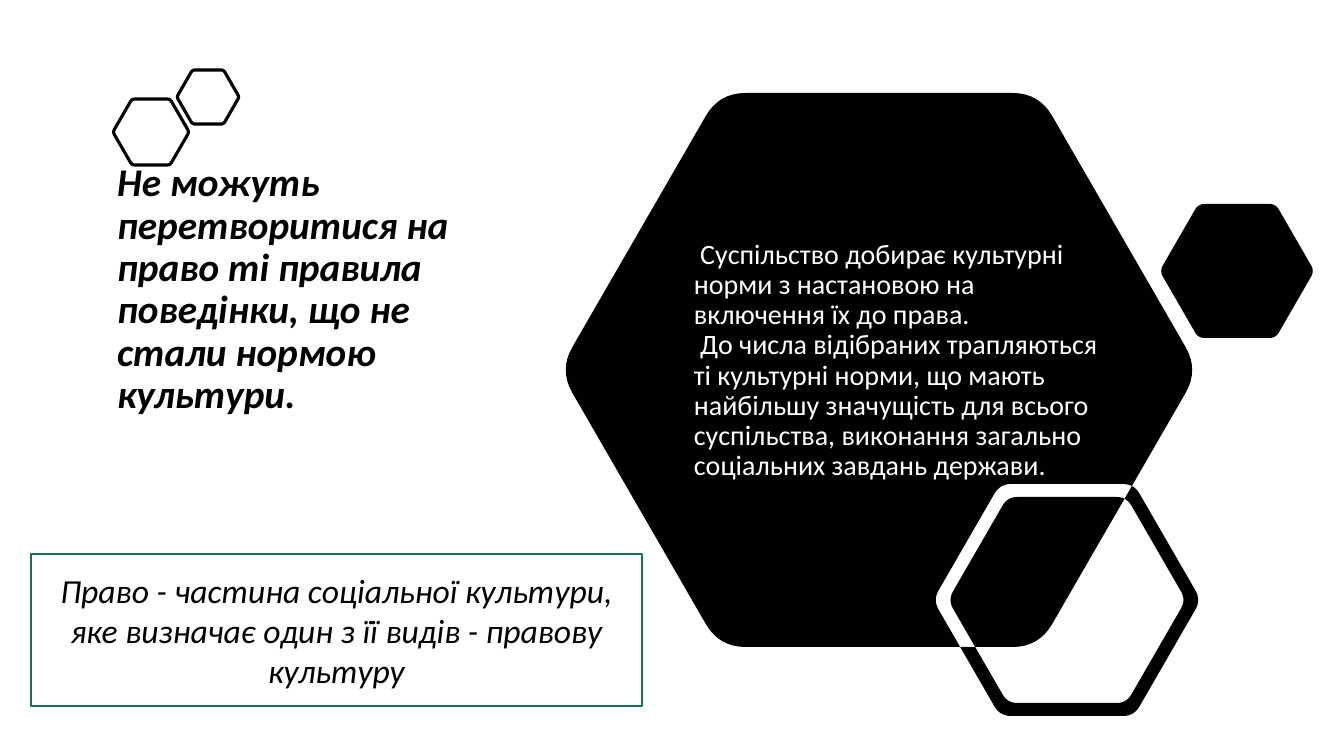
import math

import pptx
import pptx.dml.color
import pptx.enum.shapes
import pptx.enum.text
import pptx.util

BLACK = pptx.dml.color.RGBColor(0x00, 0x00, 0x00)
WHITE = pptx.dml.color.RGBColor(0xFF, 0xFF, 0xFF)
GREEN = pptx.dml.color.RGBColor(0x15, 0x72, 0x59)
ALIGN = pptx.enum.text.PP_ALIGN
MIDDLE = pptx.enum.text.MSO_ANCHOR.MIDDLE
NO_FIT = pptx.enum.text.MSO_AUTO_SIZE.NONE
RECT = pptx.enum.shapes.MSO_SHAPE.RECTANGLE
FONT = "Calibri"
CUT = 0.083
STEPS = 8

CLAIM = "Не можуть перетворитися на право ті правила поведінки, що не стали нормою культури."
NORMS = [
    " Суспільство добирає культурні норми з настановою на включення їх до права.",
    " До числа відібраних трапляються ті культурні норми, що мають найбільшу значущість "
    "для всього суспільства, виконання загально соціальних завдань держави.",
]
THESIS = "Право - частина соціальної культури, яке визначає один з її видів - правову культуру"


def px(count):
    return round(count * 914400 / 100.8)


def put_text(shape, *lines, size, color=BLACK, bold=False, italic=False,
             align=ALIGN.LEFT, spacing=1.0):
    frame = shape.text_frame
    frame.word_wrap = True
    frame.auto_size = NO_FIT
    frame.vertical_anchor = MIDDLE
    frame.text = "\n".join(lines)
    for para in frame.paragraphs:
        para.alignment = align
        para.line_spacing = spacing
        para.space_before = pptx.util.Pt(0)
        font = para.runs[0].font
        font.name = FONT
        font.size = pptx.util.Pt(size)
        font.bold = bold
        font.italic = italic
        font.color.rgb = color


def place(shape, left, top, width, height):
    shape.left, shape.top = px(left), px(top)
    shape.width, shape.height = px(width), px(height)


def hex_points(mid_x, mid_y, height):
    side = height / math.sqrt(3)
    peaks = [(mid_x + side * math.cos(math.radians(angle)),
              mid_y + side * math.sin(math.radians(angle)))
             for angle in range(0, 360, 60)]
    points = []
    for i, peak in enumerate(peaks):
        start, end = [
            tuple(p + CUT * (n - p) for p, n in zip(peak, near))
            for near in (peaks[i - 1], peaks[(i + 1) % 6])
        ]
        for step in range(STEPS + 1):
            t = step / STEPS
            points.append(tuple(
                px((1 - t) ** 2 * a + 2 * t * (1 - t) * p + t ** 2 * b)
                for a, p, b in zip(start, peak, end)))
    return points


def add_hexes(slide, *hexes, fill=None, line=None):
    paths = [hex_points(*item) for item in hexes]
    form = slide.shapes.build_freeform(*paths[0][0], scale=1.0)
    for i, points in enumerate(paths):
        if i:
            form.move_to(*points[0])
        form.add_line_segments(points[1:], close=True)
    shape = form.convert_to_shape()
    shape.shadow.inherit = False
    if fill is None:
        shape.fill.background()
    else:
        shape.fill.solid()
        shape.fill.fore_color.rgb = fill
    if line is None:
        shape.line.fill.background()
    else:
        shape.line.color.rgb = line
        shape.line.width = pptx.util.Pt(2.25)


def add_frame(slide, left, top, width, height):
    shape = slide.shapes.add_shape(RECT, px(left), px(top), px(width), px(height))
    shape.shadow.inherit = False
    shape.fill.solid()
    shape.fill.fore_color.rgb = WHITE
    shape.line.color.rgb = GREEN
    shape.line.width = pptx.util.Pt(1)
    return shape


def main():
    deck = pptx.Presentation()
    deck.slide_width, deck.slide_height = px(1344), px(756)
    slide = deck.slides.add_slide(deck.slide_layouts[5])

    title = slide.shapes.title
    place(title, 107, 172, 409, 236)
    put_text(title, CLAIM, size=28, bold=True, italic=True, spacing=0.9)

    add_hexes(slide, (151, 132, 66), line=BLACK)
    add_hexes(slide, (208, 97, 54), line=BLACK)
    add_hexes(slide, (879, 370, 554), (1067, 600, 232), (1067, 600, 206),
              (1237, 271, 134), fill=BLACK)

    body = slide.shapes.add_textbox(px(684), px(236), px(429), px(250))
    put_text(body, *NORMS, size=20, color=WHITE, spacing=0.9)

    frame = add_frame(slide, 31, 554, 611, 152)
    put_text(frame, THESIS, size=24, italic=True, align=ALIGN.CENTER)

    deck.save("out.pptx")


if __name__ == "__main__":
    main()
